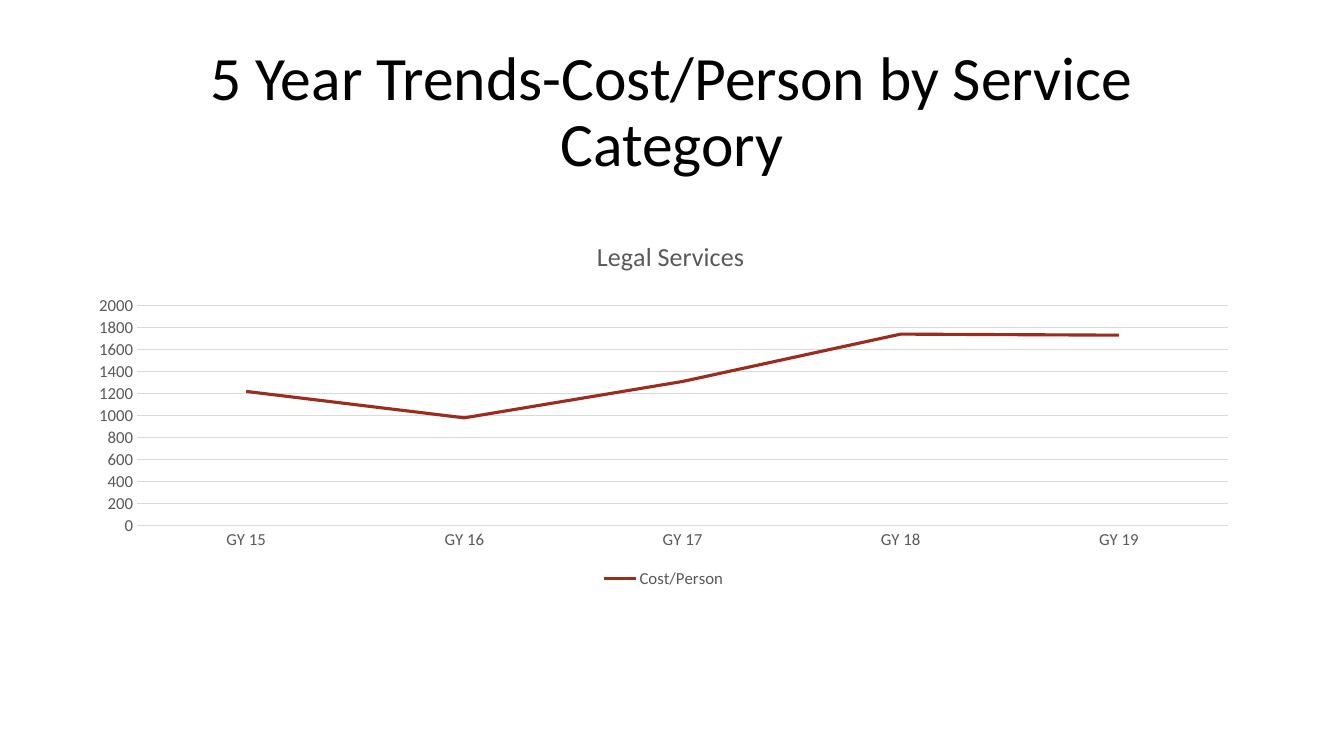
from pptx import Presentation
from pptx.chart.data import CategoryChartData
from pptx.dml.color import RGBColor
from pptx.enum.chart import XL_CHART_TYPE as Chart, XL_LEGEND_POSITION as Legend, XL_TICK_MARK as Tick
from pptx.enum.text import MSO_ANCHOR as Anchor, PP_ALIGN as Align
from pptx.oxml import parse_xml
from pptx.oxml.ns import nsdecls, qn
from pptx.util import Pt

FONT = "Calibri"
COLORS = {"title": "000000", "label": "595959", "grid": "D9D9D9", "cost": "9B2D1F"}
COST_PER_PERSON = {"GY 15": 1220, "GY 16": 980, "GY 17": 1310, "GY 18": 1740, "GY 19": 1730}
CHART_WIDTH, CHART_HEIGHT = 840, 260.6


def rgb(name: str) -> RGBColor:
    return RGBColor.from_string(COLORS[name])


def style_font(font, size: float, color: str) -> None:
    font.name = FONT
    font.size = Pt(size)
    font.bold = False
    font.color.rgb = rgb(color)


def style_line(line, color: str, width: float) -> None:
    line.color.rgb = rgb(color)
    line.width = Pt(width)


def write_text(tf, text: str, *, size: float, color: str, spacing: float = 1.0) -> None:
    p = tf.paragraphs[0]
    p.alignment = Align.CENTER
    p.line_spacing = spacing
    r = p.add_run()
    r.text = text
    style_font(r.font, size, color)


def manual_layout(x: float, y: float, w: float = 0, h: float = 0):
    target = '<c:layoutTarget val="inner"/>' if w else ""
    size = f'<c:w val="{w / CHART_WIDTH}"/><c:h val="{h / CHART_HEIGHT}"/>' if w else ""
    return parse_xml(
        f'<c:layout {nsdecls("c")}><c:manualLayout>{target}'
        '<c:xMode val="edge"/><c:yMode val="edge"/>'
        f'<c:x val="{x / CHART_WIDTH}"/><c:y val="{y / CHART_HEIGHT}"/>{size}'
        '</c:manualLayout></c:layout>'
    )


def set_layout(parent, index: int, layout) -> None:
    for old in parent.findall(qn("c:layout")):
        parent.remove(old)
    parent.insert(index, layout)


def add_title(s, text: str) -> None:
    sp = s.shapes.title
    sp.left, sp.top, sp.width, sp.height = Pt(66), Pt(28.8), Pt(828), Pt(104.4)
    tf = sp.text_frame
    tf.word_wrap = True
    tf.vertical_anchor = Anchor.MIDDLE
    write_text(tf, text, size=44, color="title", spacing=0.9)


def add_cost_chart(s) -> None:
    data = CategoryChartData()
    data.categories = list(COST_PER_PERSON)
    data.add_series("Cost/Person", list(COST_PER_PERSON.values()))
    chart = s.shapes.add_chart(
        Chart.LINE, Pt(54), Pt(162.7), Pt(CHART_WIDTH), Pt(CHART_HEIGHT), data
    ).chart
    style_font(chart.font, 12, "label")

    chart.has_title = True
    title = chart.chart_title
    write_text(title.text_frame, "Legal Services", size=18.6, color="label")
    title.include_in_layout = False
    set_layout(title.element if hasattr(title, "element") else title._element, 1, manual_layout(369, 4))

    chart.has_legend = True
    chart.legend.position = Legend.BOTTOM
    chart.legend.include_in_layout = False
    style_font(chart.legend.font, 12, "label")

    for axis in (chart.category_axis, chart.value_axis):
        axis.major_tick_mark = axis.minor_tick_mark = Tick.NONE
        style_font(axis.tick_labels.font, 12, "label")
    style_line(chart.category_axis.format.line, "grid", 0.75)

    values = chart.value_axis
    values.minimum_scale, values.maximum_scale, values.major_unit = 0, 2000, 200
    values.format.line.fill.background()
    style_line(values.major_gridlines.format.line, "grid", 0.75)

    plot = chart.plots[0]
    plot.vary_by_categories = False
    set_layout(plot._element.getparent(), 0, manual_layout(43.9, 55.5, 779.3, 157.5))
    cost = plot.series[0]
    cost.smooth = False
    style_line(cost.format.line, "cost", 2.25)


def main() -> None:
    prs = Presentation()
    prs.slide_width, prs.slide_height = Pt(960), Pt(540)
    s = prs.slides.add_slide(prs.slide_layouts.get_by_name("Title Only"))
    add_title(s, "5 Year Trends-Cost/Person by Service Category")
    add_cost_chart(s)
    prs.save("out.pptx")


if __name__ == "__main__":
    main()
